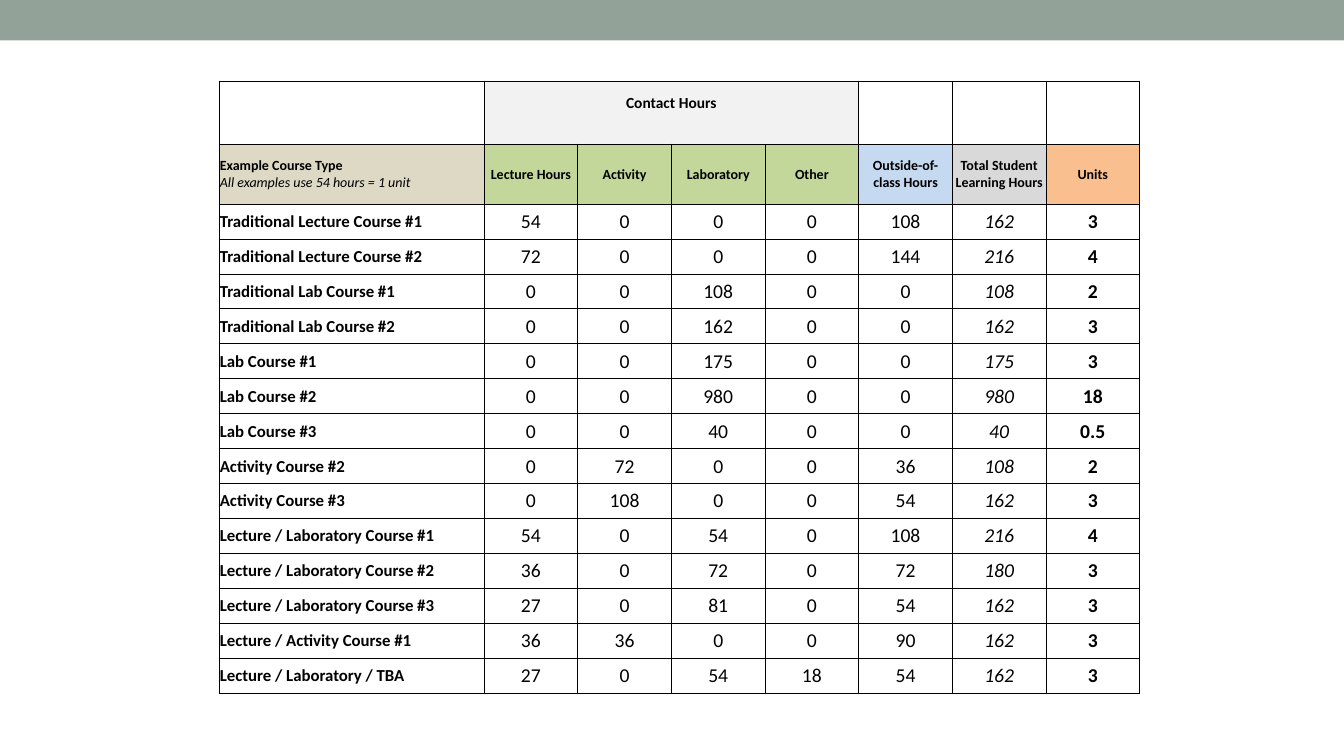
from lxml.etree import SubElement
from pptx import Presentation
from pptx.dml.color import RGBColor
from pptx.enum.shapes import MSO_SHAPE as Shape
from pptx.enum.text import MSO_ANCHOR as Anchor, PP_ALIGN as Align
from pptx.oxml.ns import qn
from pptx.util import Cm, Pt

BLACK = RGBColor(0x00, 0x00, 0x00)
SAGE = RGBColor(0x93, 0xA2, 0x99)
PALE_GRAY = RGBColor(0xF2, 0xF2, 0xF2)
GRAY = RGBColor(0xD9, 0xD9, 0xD9)
TAN = RGBColor(0xDD, 0xD9, 0xC4)
GREEN = RGBColor(0xC4, 0xD7, 0x9B)
BLUE = RGBColor(0xC5, 0xD9, 0xF1)
ORANGE = RGBColor(0xFA, 0xBF, 0x8F)

COLUMN_WIDTHS = [6.68] + [2.36] * 7
TITLE_HEIGHT, HEADER_HEIGHT, COURSE_HEIGHT = 1.59, 1.51, 0.88

HEADERS = [
    ("Lecture Hours", GREEN),
    ("Activity", GREEN),
    ("Laboratory", GREEN),
    ("Other", GREEN),
    ("Outside-of-class Hours", BLUE),
    ("Total Student Learning Hours", GRAY),
    ("Units", ORANGE),
]

# Lecture, activity, laboratory, other, outside of class, total, units
COURSES = [
    ("Traditional Lecture Course #1", 54, 0, 0, 0, 108, 162, 3),
    ("Traditional Lecture Course #2", 72, 0, 0, 0, 144, 216, 4),
    ("Traditional Lab Course #1", 0, 0, 108, 0, 0, 108, 2),
    ("Traditional Lab Course #2", 0, 0, 162, 0, 0, 162, 3),
    ("Lab Course #1", 0, 0, 175, 0, 0, 175, 3),
    ("Lab Course #2", 0, 0, 980, 0, 0, 980, 18),
    ("Lab Course #3", 0, 0, 40, 0, 0, 40, 0.5),
    ("Activity Course #2", 0, 72, 0, 0, 36, 108, 2),
    ("Activity Course #3", 0, 108, 0, 0, 54, 162, 3),
    ("Lecture / Laboratory Course #1", 54, 0, 54, 0, 108, 216, 4),
    ("Lecture / Laboratory Course #2", 36, 0, 72, 0, 72, 180, 3),
    ("Lecture / Laboratory Course #3", 27, 0, 81, 0, 54, 162, 3),
    ("Lecture / Activity Course #1", 36, 36, 0, 0, 90, 162, 3),
    ("Lecture / Laboratory / TBA", 27, 0, 54, 18, 54, 162, 3),
]
TOTAL_COLUMN, UNITS_COLUMN = 6, 7


class SlideBuilder:
    """Holds the current slide and the common style."""

    font_name = "Calibri"
    border_width = Pt(0.5)

    def __init__(self, slide):
        self.slide = slide

    def band(self, left, top, width, height, color):
        shape = self.slide.shapes.add_shape(
            Shape.RECTANGLE, Cm(left), Cm(top), Cm(width), Cm(height))
        shape.shadow.inherit = False
        shape.fill.solid()
        shape.fill.fore_color.rgb = color
        shape.line.fill.background()

    def table(self, left, top, widths, heights):
        frame = self.slide.shapes.add_table(
            len(heights), len(widths), Cm(left), Cm(top),
            Cm(sum(widths)), Cm(sum(heights)))
        table = frame.table
        table.first_row = table.horz_banding = False
        for column, width in zip(table.columns, widths):
            column.width = Cm(width)
        for row, height in zip(table.rows, heights):
            row.height = Cm(height)
        for cell in table.iter_cells():
            self.border(cell)
            cell.fill.background()
        return table

    def border(self, cell):
        properties = cell._tc.get_or_add_tcPr()
        for side in ("a:lnL", "a:lnR", "a:lnT", "a:lnB"):
            line = SubElement(properties, qn(side), w=str(self.border_width))
            fill = SubElement(line, qn("a:solidFill"))
            SubElement(fill, qn("a:srgbClr"), val=str(BLACK))

    def cell(self, cell, text, size, bold=True, italic=False,
             align=Align.CENTER, color=None, bottom=0):
        cell.vertical_anchor = Anchor.MIDDLE
        cell.margin_left = cell.margin_right = cell.margin_top = Cm(0.02)
        cell.margin_bottom = Cm(bottom)
        if color is not None:
            cell.fill.solid()
            cell.fill.fore_color.rgb = color
        cell.text = text
        for paragraph in cell.text_frame.paragraphs:
            paragraph.alignment = align
            font = paragraph.font
            font.name, font.size = self.font_name, Pt(size)
            font.bold, font.italic = bold, italic
            font.color.rgb = BLACK


def main():
    presentation = Presentation()
    presentation.slide_width, presentation.slide_height = Cm(33.87), Cm(19.05)
    slide = presentation.slides.add_slide(presentation.slide_layouts[6])
    builder = SlideBuilder(slide)

    # Top band
    builder.band(0, 0, 33.87, 1.02, SAGE)

    # Empty grid
    heights = [TITLE_HEIGHT, HEADER_HEIGHT] + [COURSE_HEIGHT] * len(COURSES)
    table = builder.table(5.52, 2.04, COLUMN_WIDTHS, heights)

    # Group heading, raised by a deep bottom margin
    contact_hours = table.cell(0, 1)
    contact_hours.merge(table.cell(0, 4))
    builder.cell(contact_hours, "Contact Hours", 11, color=PALE_GRAY, bottom=0.48)

    # Column headings
    course_type = table.cell(1, 0)
    builder.cell(course_type,
                 "Example Course Type\nAll examples use 54 hours = 1 unit",
                 10, align=Align.LEFT, color=TAN)
    note = course_type.text_frame.paragraphs[1]
    note.font.bold, note.font.italic = False, True
    for column, (heading, color) in enumerate(HEADERS, start=1):
        builder.cell(table.cell(1, column), heading, 10, color=color)

    # Courses
    for row, (course, *values) in enumerate(COURSES, start=2):
        builder.cell(table.cell(row, 0), course, 12, align=Align.LEFT)
        for column, value in enumerate(values, start=1):
            builder.cell(table.cell(row, column), str(value), 14,
                         bold=column == UNITS_COLUMN,
                         italic=column == TOTAL_COLUMN)

    presentation.save("out.pptx")


if __name__ == "__main__":
    main()
